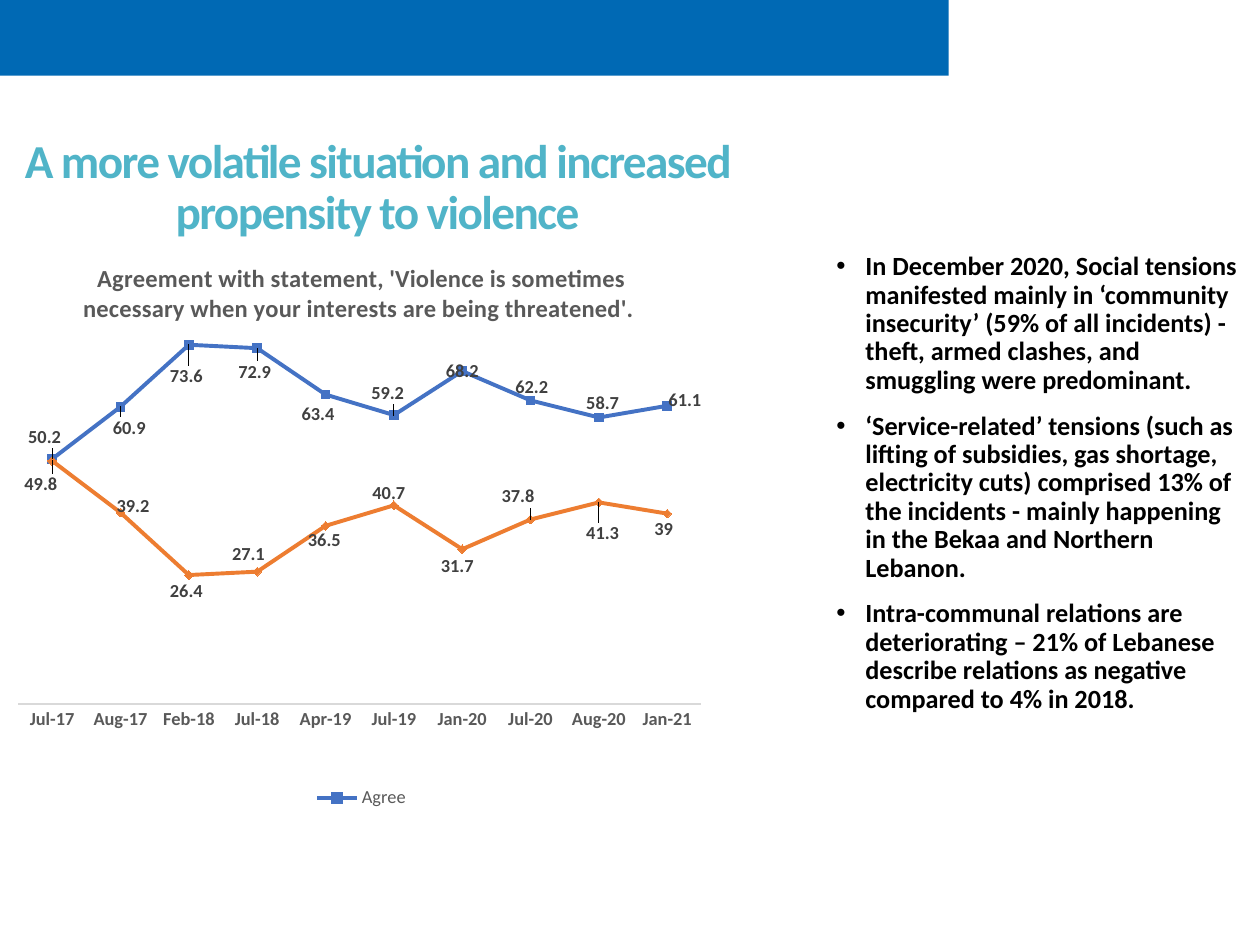
from lxml.etree import SubElement
from pptx import Presentation
from pptx.chart.data import CategoryChartData
from pptx.dml.color import RGBColor
from pptx.enum.chart import XL_CHART_TYPE as ChartType, XL_LABEL_POSITION as LabelPosition
from pptx.enum.chart import XL_LEGEND_POSITION as LegendPosition, XL_TICK_MARK as TickMark
from pptx.enum.shapes import MSO_SHAPE as Shape
from pptx.enum.text import MSO_ANCHOR as Anchor, MSO_AUTO_SIZE as AutoSize, PP_ALIGN as Align
from pptx.oxml import parse_xml
from pptx.oxml.ns import nsdecls, qn
from pptx.util import Inches, Pt

COLORS = {
    "bar": "0069B4", "title": "50B4C8", "text": "000000", "muted": "595959",
    "label": "404040", "axis": "D9D9D9", "agree": "4472C4", "disagree": "ED7D31",
}
FONT = "Calibri"
CHART_WIDTH, CHART_HEIGHT = 5.74, 4.57

TITLE = "A more volatile situation and increased propensity to violence"
CHART_TITLE = ("Agreement with statement, 'Violence is sometimes necessary "
               "when your interests are being threatened'. ")
BULLETS = [
    "In December 2020, Social tensions manifested mainly in ‘community insecurity’ "
    "(59% of all incidents) - theft, armed clashes, and smuggling were predominant.",
    "‘Service-related’ tensions (such as lifting of subsidies, gas shortage, electricity cuts) "
    "comprised 13% of the incidents - mainly happening in the Bekaa and Northern Lebanon.",
    "Intra-communal relations are deteriorating – 21% of Lebanese describe relations "
    "as negative compared to 4% in 2018.",
]
WAVES = ["Jul-17", "Aug-17", "Feb-18", "Jul-18", "Apr-19",
         "Jul-19", "Jan-20", "Jul-20", "Aug-20", "Jan-21"]
SERIES = {
    "Agree": [50.2, 60.9, 73.6, 72.9, 63.4, 59.2, 68.2, 62.2, 58.7, 61.1],
    "Disagree": [49.8, 39.2, 26.4, 27.1, 36.5, 40.7, 31.7, 37.8, 41.3, 39],
}
LABEL_OFFSETS = {
    "Agree": [(-0.06, -0.17), (0.07, 0.17), (-0.02, 0.25), (-0.02, 0.19), (-0.06, 0.16),
              (-0.05, -0.17), (0, 0), (0.01, -0.1), (0.03, -0.11), (0.14, -0.04)],
    "Disagree": [(-0.09, 0.19), (0.1, -0.05), (-0.02, 0.13), (-0.07, -0.14), (-0.01, 0.12),
                 (-0.04, -0.09), (-0.04, 0.14), (-0.1, -0.18), (0.03, 0.25), (-0.03, 0.13)],
}


def rgb(name):
    return RGBColor.from_string(COLORS[name])


def style_font(font, size, color, bold=False):
    font.name = FONT
    font.size = Pt(size)
    font.bold = bold
    font.color.rgb = rgb(color)


def add_bar(slide):
    bar = slide.shapes.add_shape(Shape.RECTANGLE, 0, 0, Inches(7.53), Inches(0.6))
    bar.shadow.inherit = False
    bar.fill.solid()
    bar.fill.fore_color.rgb = rgb("bar")
    bar.line.fill.background()


def set_title(slide):
    title = slide.shapes.title
    title.left, title.top = Inches(0), Inches(1.04)
    title.width, title.height = Inches(5.99), Inches(0.92)
    frame = title.text_frame
    frame.text = TITLE
    frame.word_wrap = True
    frame.auto_size = AutoSize.NONE
    frame.vertical_anchor = Anchor.MIDDLE
    paragraph = frame.paragraphs[0]
    paragraph.alignment = Align.CENTER
    paragraph.line_spacing = 0.9
    run = paragraph.runs[0]
    style_font(run.font, 27, "title", True)
    run.font._element.set("spc", "-90")


def add_bullets(slide):
    box = slide.shapes.add_textbox(Inches(6.54), Inches(1.96), Inches(3.46), Inches(4.35))
    frame = box.text_frame
    frame.word_wrap = True
    for index, text in enumerate(BULLETS):
        paragraph = frame.add_paragraph() if index else frame.paragraphs[0]
        paragraph.text = text
        paragraph.line_spacing = 0.9
        paragraph.space_before = Pt(10 if index else 0)
        properties = paragraph._p.get_or_add_pPr()
        properties.set("marL", str(Inches(0.23)))
        properties.set("indent", str(-Inches(0.23)))
        SubElement(properties, qn("a:buFont")).set("typeface", "Arial")
        SubElement(properties, qn("a:buChar")).set("char", "•")
        style_font(paragraph.runs[0].font, 15, "text", True)


def manual_layout(x, y, **extra):
    parts = {**extra, "x": x, "y": y}
    order = ["layoutTarget", "xMode", "yMode", "x", "y", "w", "h"]
    body = "".join(f'<c:{key} val="{parts[key]}"/>' for key in order if key in parts)
    return parse_xml(f'<c:layout {nsdecls("c")}><c:manualLayout>{body}</c:manualLayout></c:layout>')


def style_series(series):
    color = rgb(series.name.lower())
    series.smooth = False
    series.format.line.color.rgb = color
    series.format.line.width = Pt(2.25)
    series.marker.style = None
    labels = series.data_labels
    labels.show_value = True
    labels.position = LabelPosition.CENTER
    labels.number_format = "General"
    labels.number_format_is_linked = False
    style_font(labels.font, 10.5, "label", True)
    for index, (x, y) in enumerate(LABEL_OFFSETS[series.name]):
        label = series.points[index].data_label
        style_font(label.font, 10.5, "label", True)
        label.position = LabelPosition.CENTER
        element = label._dLbl
        element.find(qn("c:idx")).addnext(
            manual_layout(round(x / CHART_WIDTH, 4), round(y / CHART_HEIGHT, 4)))


def add_legend(chart):
    chart.has_legend = True
    legend = chart.legend
    legend.position = LegendPosition.BOTTOM
    legend.include_in_layout = False
    style_font(legend.font, 10.5, "muted")
    legend._element.find(qn("c:legendPos")).addnext(parse_xml(
        f'<c:legendEntry {nsdecls("c")}><c:idx val="1"/><c:delete val="1"/></c:legendEntry>'))


def add_line_chart(slide):
    data = CategoryChartData()
    data.categories = WAVES
    for name, values in SERIES.items():
        data.add_series(name, values)
    chart = slide.shapes.add_chart(
        ChartType.LINE, Inches(0), Inches(1.89),
        Inches(CHART_WIDTH), Inches(CHART_HEIGHT), data).chart
    style_font(chart.font, 10, "text")
    chart.has_title = True
    chart.chart_title.text_frame.text = CHART_TITLE
    style_font(chart.chart_title.text_frame.paragraphs[0].runs[0].font, 14, "muted", True)
    chart.plots[0].vary_by_categories = False
    for series in chart.plots[0].series:
        style_series(series)
    category_axis = chart.category_axis
    category_axis.major_tick_mark = TickMark.NONE
    category_axis.format.line.color.rgb = rgb("axis")
    category_axis.format.line.width = Pt(0.75)
    style_font(category_axis.tick_labels.font, 10.5, "muted", True)
    value_axis = chart.value_axis
    value_axis.minimum_scale, value_axis.maximum_scale = 0, 80
    value_axis.has_major_gridlines = False
    value_axis.visible = False
    add_legend(chart)
    plot_area = chart._chartSpace.chart.plotArea
    for layout in plot_area.findall(qn("c:layout")):
        plot_area.remove(layout)
    plot_area.insert(0, manual_layout(
        0.025, 0.131, w=0.945, h=0.678, layoutTarget="inner", xMode="edge", yMode="edge"))


def main():
    presentation = Presentation()
    presentation.slide_width, presentation.slide_height = Inches(10), Inches(7.5)
    slide = presentation.slides.add_slide(presentation.slide_layouts[5])
    add_bar(slide)
    set_title(slide)
    add_bullets(slide)
    add_line_chart(slide)
    presentation.save("out.pptx")


if __name__ == "__main__":
    main()
